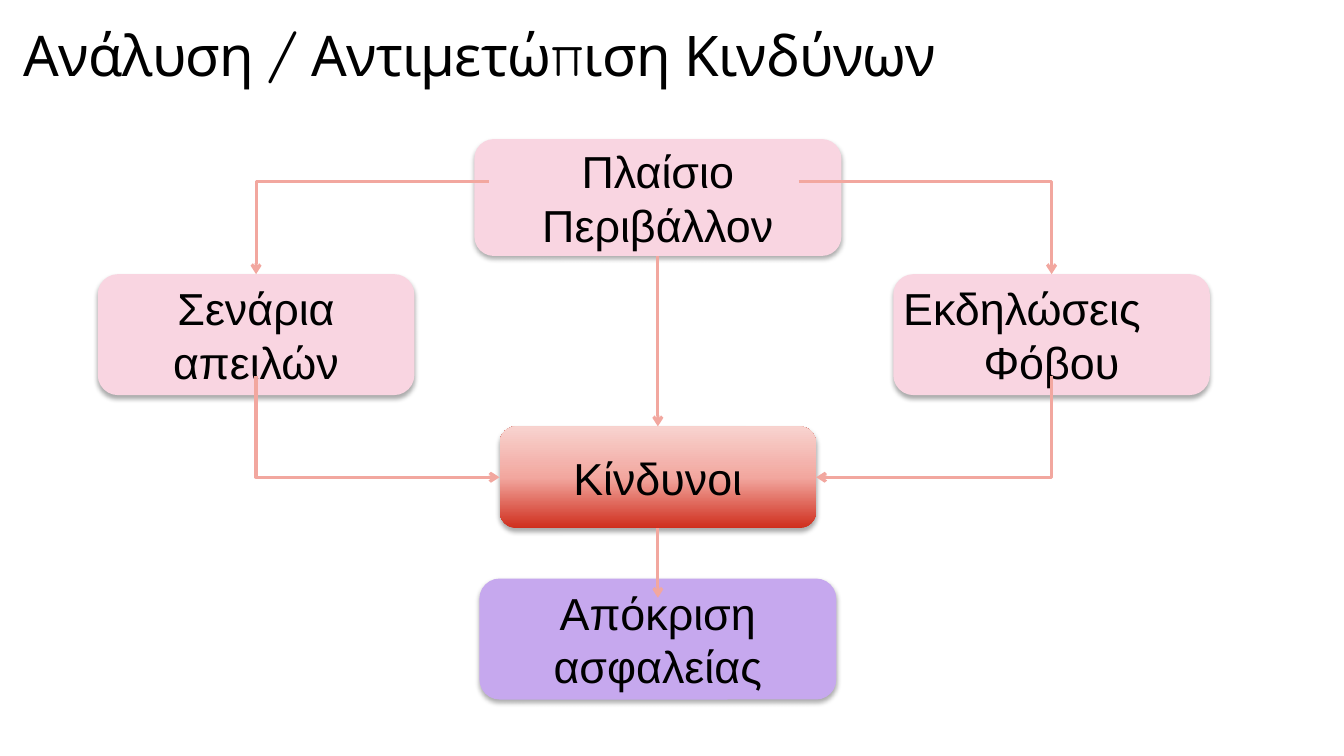
from lxml import etree
from pptx import Presentation
from pptx.dml.color import RGBColor
from pptx.enum.shapes import MSO_CONNECTOR as LineKind, MSO_SHAPE as Preset
from pptx.enum.text import MSO_ANCHOR as Anchor, MSO_AUTO_SIZE as AutoSize, PP_ALIGN as Align
from pptx.oxml import parse_xml
from pptx.oxml.ns import nsdecls, qn
from pptx.util import Pt

EMU_PER_PX = 9144  # 100 px to the inch
BLACK = RGBColor(0x00, 0x00, 0x00)
PINK = RGBColor(0xF9, 0xD5, 0xE1)
PURPLE = RGBColor(0xC6, 0xA8, 0xEE)
SALMON = RGBColor(0xF2, 0xA7, 0x9F)
RED = RGBColor(0xCF, 0x2E, 0x1D)
PALE_RED = RGBColor(0xF8, 0xD3, 0xCF)
RISK_STOPS = [(0, RED), (50, SALMON), (100, PALE_RED)]
TOP, BOTTOM = 0, 2  # connection sites


def px(length):
    return round(length * EMU_PER_PX)


def write(frame, lines, *, font, size, aligns, anchor, line_spacing=None, spacing=None):
    """Write one paragraph per line, each with its own alignment."""
    frame.word_wrap = True
    frame.auto_size = AutoSize.NONE
    frame.vertical_anchor = anchor
    for index, (line, align) in enumerate(zip(lines, aligns)):
        paragraph = frame.paragraphs[0] if index == 0 else frame.add_paragraph()
        paragraph.alignment = align
        paragraph.line_spacing = line_spacing
        run = paragraph.add_run()
        run.text = line
        run.font.name = font
        run.font.size = Pt(size)
        run.font.color.rgb = BLACK
        if spacing is not None:
            run.font._element.set("spc", str(spacing))


def fill_gradient(shape, stops):
    shape.fill.gradient()
    gradient = shape._element.spPr.find(qn("a:gradFill"))
    stop_list = gradient.find(qn("a:gsLst"))
    for old_stop in list(stop_list):
        stop_list.remove(old_stop)
    for percent, color in stops:
        stop = etree.SubElement(stop_list, qn("a:gs"), pos=str(percent * 1000))
        etree.SubElement(stop, qn("a:srgbClr"), val=str(color))
    shape.fill.gradient_angle = 90  # from bottom to top


def add_soft_shadow(shape):
    shape.shadow.inherit = False
    effects = shape._element.spPr.find(qn("a:effectLst"))
    effects.append(parse_xml(
        f'<a:outerShdw {nsdecls("a")} blurRad="{Pt(3.5)}" dist="{Pt(2.2)}" dir="5400000" '
        'rotWithShape="0"><a:srgbClr val="000000"><a:alpha val="32000"/></a:srgbClr>'
        '</a:outerShdw>'))


def add_stage(slide, box, lines, fill, aligns=None):
    """Draw one rounded stage of the risk analysis."""
    stage = slide.shapes.add_shape(Preset.ROUNDED_RECTANGLE, *map(px, box))
    if isinstance(fill, RGBColor):
        stage.fill.solid()
        stage.fill.fore_color.rgb = fill
    else:
        fill_gradient(stage, fill)
    stage.line.fill.background()
    add_soft_shadow(stage)
    frame = stage.text_frame
    frame.margin_left = frame.margin_right = px(4)
    frame.margin_top = frame.margin_bottom = 0
    write(frame, lines, font="Arial", size=32, anchor=Anchor.MIDDLE,
          aligns=aligns or [Align.CENTER] * len(lines))
    return stage


def add_arrow(slide, begin, end, kind=LineKind.STRAIGHT, head="tailEnd"):
    """Draw an arrow; an elbow runs across first, then up or down."""
    arrow = slide.shapes.add_connector(kind, *map(px, begin + end))
    arrow.line.color.rgb = SALMON
    arrow.line.width = Pt(2.25)
    properties = arrow._element.spPr
    if kind == LineKind.ELBOW:
        properties.find(qn("a:prstGeom")).set("prst", "bentConnector2")
    etree.SubElement(properties.find(qn("a:ln")), qn(f"a:{head}"), type="arrow")
    etree.SubElement(properties, qn("a:effectLst"))
    return arrow


def add_title(slide, box):
    title = slide.shapes.title
    title.left, title.top, title.width, title.height = map(px, box)
    write(title.text_frame, ["Ανάλυση / Αντιμετώπιση Κινδύνων"], font="Quicksand", size=40,
          aligns=[Align.LEFT], anchor=Anchor.BOTTOM, line_spacing=0.9, spacing=-50)


def add_risk_flow(slide, box):
    left, top, width, height = box
    middle = left + width / 2 + 4
    side_width, side_height = 314, 120
    side_top = top + 134
    risks_top, risks_height = top + 285, 101
    response_top = top + height - side_height
    threats_x = left + side_width / 2
    fears_x = left + width - side_width / 2

    def centred(x, y, w, h):
        return x - w / 2, y, w, h

    # Stages
    context = add_stage(slide, centred(middle, top, 364, 116),
                        ["Πλαίσιο", "Περιβάλλον"], PINK)
    add_stage(slide, centred(fears_x, side_top, side_width, side_height),
              ["Εκδηλώσεις", "Φόβου"], PINK, [Align.LEFT, Align.CENTER])
    add_stage(slide, centred(threats_x, side_top, side_width, side_height),
              ["Σενάρια απειλών"], PINK)
    risks = add_stage(slide, centred(middle, risks_top, side_width, risks_height),
                      ["Κίνδυνοι"], RISK_STOPS)
    add_stage(slide, centred(middle, response_top, 354, side_height),
              ["Απόκριση ασφαλείας"], PURPLE)

    # Elbows from the context to each side stage, and on to the risks
    context_lane = top + 42
    risks_lane = risks_top + risks_height / 2
    for side_x, context_x, risks_x in (
            (threats_x, left + 388, middle - side_width / 2),
            (fears_x, left + 695, middle + side_width / 2)):
        add_arrow(slide, (context_x, context_lane), (side_x, side_top), LineKind.ELBOW)
        add_arrow(slide, (risks_x, risks_lane), (side_x, side_top + 101),
                  LineKind.ELBOW, head="headEnd")

    # Straight arrows down the middle
    to_risks = add_arrow(slide, (middle, top + 116), (middle, risks_top))
    to_risks.begin_connect(context, BOTTOM)
    to_risks.end_connect(risks, TOP)
    to_response = add_arrow(slide, (middle, risks_top + risks_height),
                            (middle, response_top + 19))
    to_response.begin_connect(risks, BOTTOM)


def main():
    deck = Presentation()
    deck.slide_width, deck.slide_height = px(1333), px(750)
    slide = deck.slides.add_slide(deck.slide_layouts.get_by_name("Title Only"))
    add_title(slide, (13, 1, 1150, 92))
    add_risk_flow(slide, (97, 138, 1103, 556))
    deck.save("out.pptx")


if __name__ == "__main__":
    main()
